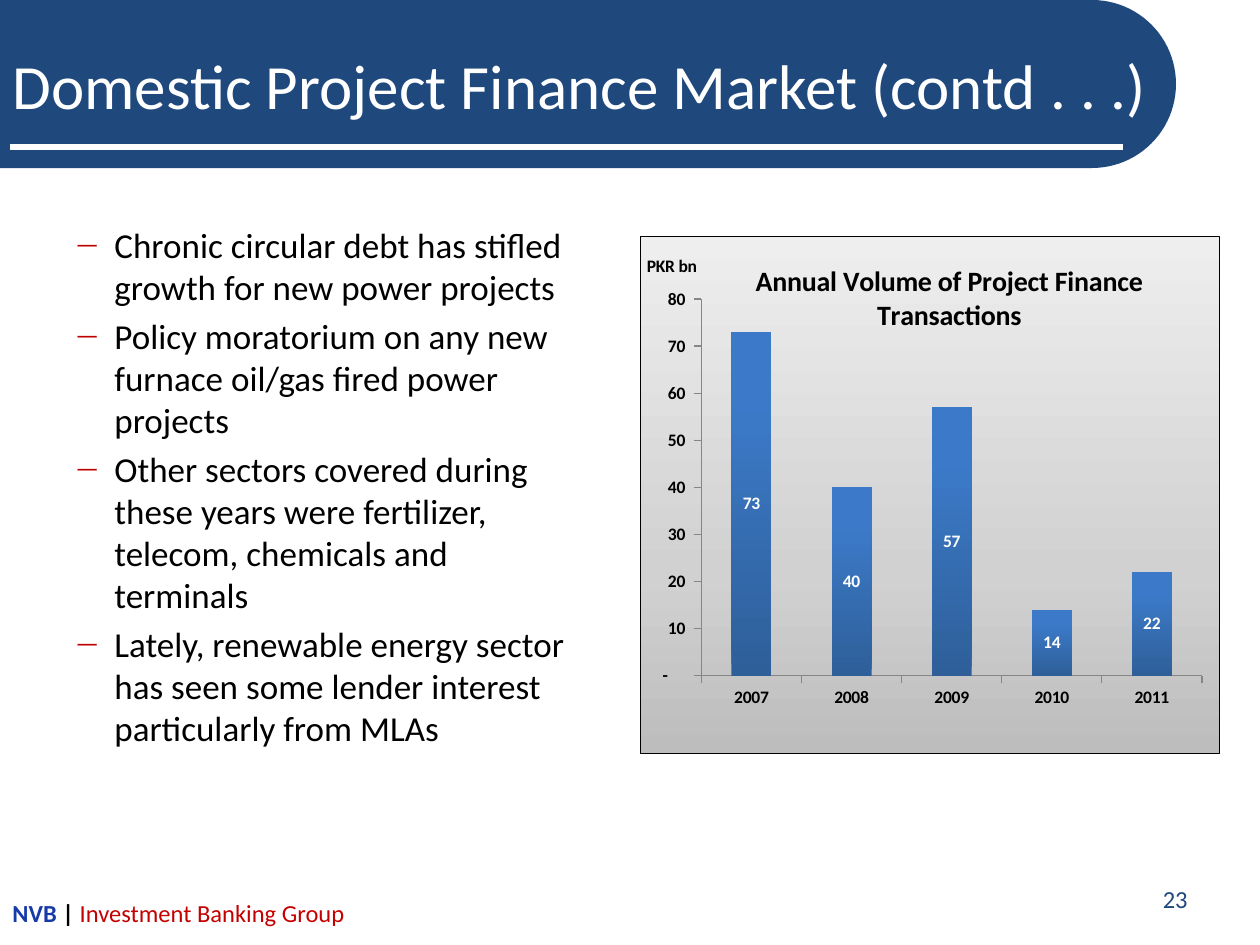
"""Build the slide on the domestic project finance market."""
from math import cos, pi, sin

from lxml.etree import SubElement
from pptx import Presentation
from pptx.chart.data import CategoryChartData
from pptx.dml.color import RGBColor
from pptx.enum.chart import XL_CHART_TYPE, XL_LABEL_POSITION, XL_TICK_MARK
from pptx.enum.text import MSO_ANCHOR, PP_ALIGN
from pptx.oxml import parse_xml
from pptx.oxml.ns import nsdecls, qn
from pptx.util import Emu, Pt

INK = {
    "navy": "1F497D", "white": "FFFFFF", "black": "000000", "dash": "C00000",
    "blue": "173AA9", "red": "C40000", "axis": "868686",
    "low": "2E5F99", "high": "3C7AC9",
}
SHADE = [(0, "BDBDBD"), (35, "D1D1D1"), (100, "EEEEEE")]
POINTS = [
    "Chronic circular debt has stifled growth for new power projects",
    "Policy moratorium on any new furnace oil/gas fired power projects",
    "Other sectors covered during these years were fertilizer, telecom, chemicals and terminals",
    "Lately, renewable energy sector has seen some lender interest particularly from MLAs",
]
DEALS = {"2007": 73, "2008": 40, "2009": 57, "2010": 14, "2011": 22}


def px(num):
    return Emu(round(num * 914400 / 126))


def hue(name):
    return RGBColor.from_string(INK[name])


def put(item, **vals):
    for key, val in vals.items():
        setattr(item, key, val)


def place(item, box):
    put(item, **dict(zip(("left", "top", "width", "height"), map(px, box))))


def layout(node, inner=False, **parts):
    for old in node.findall(qn("c:layout")):
        node.remove(old)
    modes = {"xMode": "edge", "yMode": "edge"}
    if inner:
        modes = {"layoutTarget": "inner", **modes}
    frame = parse_xml(f"<c:layout {nsdecls('c')}><c:manualLayout/></c:layout>")
    for key, val in {**modes, **parts}.items():
        SubElement(frame[0], qn(f"c:{key}")).set("val", str(val))
    node.insert(0 if inner else 1, frame)


class Deck:
    def __init__(self, face="Calibri"):
        self.face = face
        self.show = Presentation()
        put(self.show, slide_width=px(1260), slide_height=px(945))
        self.slide = self.show.slides.add_slide(self.show.slide_layouts[5])
        self.shapes = self.slide.shapes

    def font(self, font, size, tint, bold=False):
        put(font, name=self.face, size=Pt(size), bold=bold)
        font.color.rgb = hue(tint)

    def say(self, para, runs, size):
        for text, tint, bold in runs:
            run = para.add_run()
            run.text = text
            self.font(run.font, size, tint, bold)

    def title(self, box, text, size):
        head = self.shapes.title
        place(head, box)
        put(head.text_frame, vertical_anchor=MSO_ANCHOR.MIDDLE, word_wrap=True)
        para = head.text_frame.paragraphs[0]
        para.alignment = PP_ALIGN.LEFT
        self.say(para, [(text, "white", False)], size)
        self.shapes._spTree.append(head._element)

    def band(self, wide, high):
        rad = high / 2
        turns = [pi * step / 48 - pi / 2 for step in range(49)]
        curve = [(px(wide - rad + rad * cos(a)), px(rad + rad * sin(a))) for a in turns]
        form = self.shapes.build_freeform(0, 0)
        form.add_line_segments(curve + [(0, px(high))], close=True)
        band = form.convert_to_shape()
        band.shadow.inherit = False
        band.fill.solid()
        band.fill.fore_color.rgb = hue("navy")
        band.line.fill.background()

    def rule(self, left, right, top, width):
        rule = self.shapes.add_connector(1, px(left), px(top), px(right), px(top))
        rule.line.color.rgb = hue("white")
        rule.line.width = Pt(width)
        SubElement(rule._element.spPr, qn("a:effectLst"))

    def text(self, box, rows, size, align=PP_ALIGN.LEFT, anchor=MSO_ANCHOR.TOP, dash=False):
        frame = self.shapes.add_textbox(*map(px, box)).text_frame
        put(frame, word_wrap=True, vertical_anchor=anchor)
        for pos, runs in enumerate(rows):
            para = frame.add_paragraph() if pos else frame.paragraphs[0]
            para.alignment = align
            if dash:
                self.bullet(para)
            self.say(para, runs, size)

    def bullet(self, para):
        para.space_before = Pt(4)
        props = para._p.get_or_add_pPr()
        props.set("marL", str(px(102)))
        props.set("indent", str(px(-39)))
        tint = SubElement(props, qn("a:buClr"))
        SubElement(tint, qn("a:srgbClr")).set("val", INK["dash"])
        SubElement(props, qn("a:buSzPct")).set("val", "75000")
        SubElement(props, qn("a:buFont")).set("typeface", self.face)
        SubElement(props, qn("a:buChar")).set("char", "—")

    def chart(self, box, deals, name, unit):
        data = CategoryChartData()
        data.categories = list(deals)
        data.add_series("Series 1", list(deals.values()))
        kind = XL_CHART_TYPE.COLUMN_STACKED
        chart = self.shapes.add_chart(kind, *map(px, box), data).chart
        put(chart, has_legend=False, has_title=True)
        self.font(chart.font, 10, "black")
        title = chart.chart_title
        self.label(title, name, 16, x=0.19, y=0.04)
        title._element.find(qn("c:overlay")).set("val", "1")
        layout(chart._chartSpace.chart.plotArea, True, x=0.105, y=0.121, w=0.865, h=0.729)
        self.axes(chart, unit)
        self.bars(chart.plots[0])
        self.shade(chart)

    def label(self, title, text, size, **spot):
        frame = title.text_frame
        self.say(frame.paragraphs[0], [(text, "black", True)], size)
        frame._txBody.bodyPr.set("rot", "0")
        layout(title._element, **spot)

    def axes(self, chart, unit):
        for axis in (chart.category_axis, chart.value_axis):
            put(axis, has_major_gridlines=False, major_tick_mark=XL_TICK_MARK.OUTSIDE)
            axis.format.line.color.rgb = hue("axis")
            self.font(axis.tick_labels.font, 10, "black", True)
        axis = chart.value_axis
        put(axis, minimum_scale=0, maximum_scale=80, major_unit=10, has_title=True)
        form = '_(* #,##0_);_(* \\(#,##0\\);_(* "-"??_);_(@_)'
        put(axis.tick_labels, number_format=form, number_format_is_linked=False)
        self.label(axis.axis_title, unit, 10, x=0.005, y=0.028)

    def bars(self, plot):
        put(plot, gap_width=150, overlap=100, vary_by_categories=False, has_data_labels=True)
        marks = plot.data_labels
        put(marks, show_value=True, position=XL_LABEL_POSITION.CENTER)
        self.font(marks.font, 10, "white", True)
        fill = plot.series[0].format.fill
        fill.gradient()
        fill.gradient_angle = 90
        for stop, tint, spot in zip(fill.gradient_stops, ("low", "high"), (0, 0.8)):
            stop.color.rgb = hue(tint)
            stop.position = spot

    def shade(self, chart):
        stops = "".join(
            f'<a:gs pos="{pos * 1000}"><a:srgbClr val="{tint}"/></a:gs>' for pos, tint in SHADE)
        chart._chartSpace.chart.addnext(parse_xml(
            f'<c:spPr {nsdecls("c", "a")}><a:gradFill><a:gsLst>{stops}</a:gsLst>'
            f'<a:lin ang="16200000" scaled="0"/></a:gradFill><a:ln w="{Pt(0.75)}">'
            f'<a:solidFill><a:srgbClr val="{INK["black"]}"/></a:solidFill></a:ln></c:spPr>'))


def main():
    deck = Deck()
    deck.band(1176, 168)
    deck.rule(10, 1123, 147, 3)
    deck.title((0, 21, 1166, 126), "Domestic Project Finance Market (contd . . .)", 36)
    deck.text((0, 217, 601, 630), [[(text, "black", False)] for text in POINTS], 20, dash=True)
    deck.text((906, 867, 294, 63), [[("23", "navy", False)]], 14,
              PP_ALIGN.RIGHT, MSO_ANCHOR.MIDDLE)
    deck.chart((640, 236, 580, 518), DEALS,
               "Annual Volume of Project Finance Transactions", "PKR bn")
    deck.text((0, 892, 452, 53), [[("NVB ", "blue", True), ("| ", "black", True),
                                   ("Investment Banking Group", "red", False)]], 14)
    deck.show.save("out.pptx")


if __name__ == "__main__":
    main()
